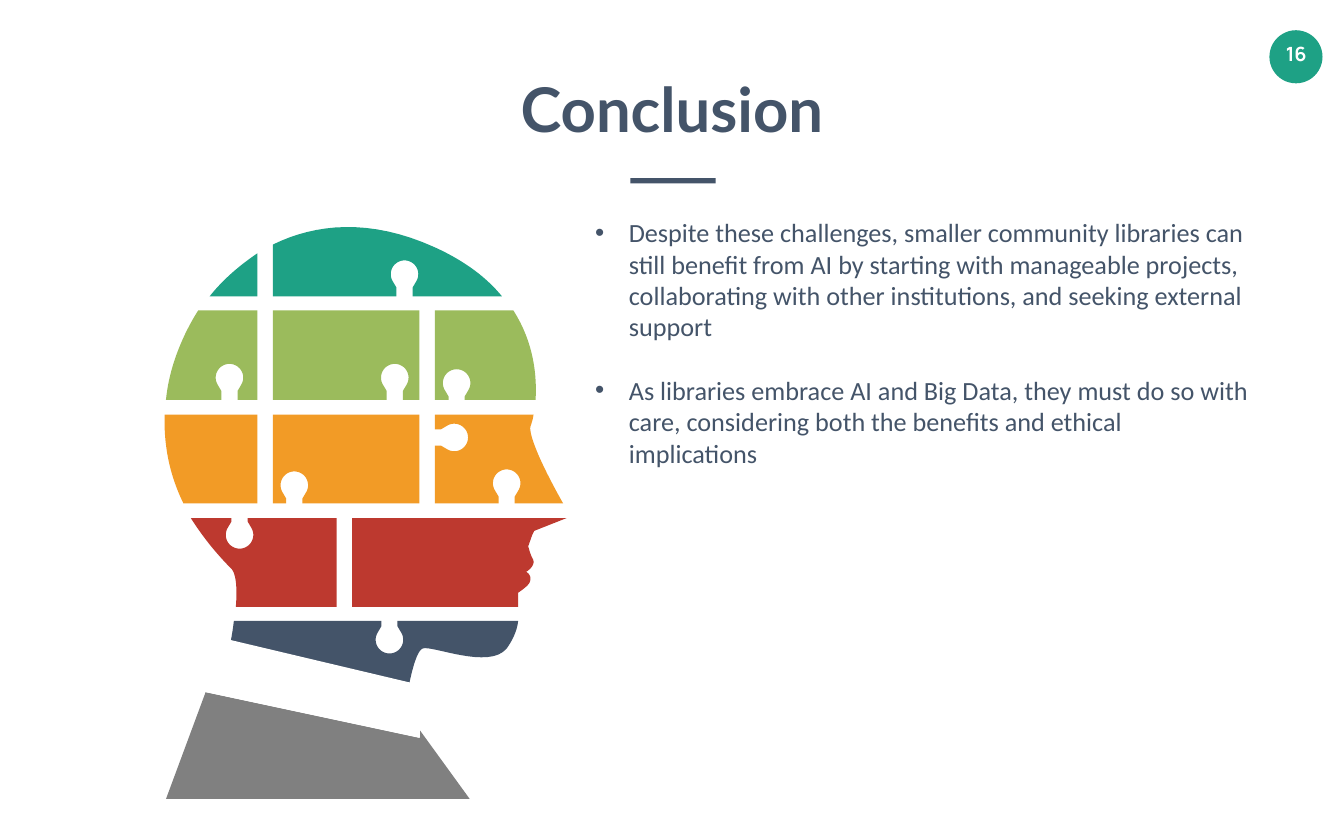
"""Build the conclusion slide: a puzzle head beside two closing points."""
from dataclasses import dataclass
from math import cos, radians, sin
from typing import Union

from lxml.etree import SubElement
from pptx import Presentation
from pptx.dml.color import RGBColor
from pptx.enum.shapes import MSO_SHAPE as Preset
from pptx.enum.text import MSO_AUTO_SIZE as AutoSize, PP_ALIGN as Align
from pptx.oxml.ns import qn
from pptx.util import Cm, Pt

Point = tuple[float, float]

TEAL, GREEN, ORANGE, RED = "1EA185", "9BBB5C", "F29B26", "BD392F"
NAVY, GREY, WHITE = "445469", "808080", "FFFFFF"
RIGHT, LEFT, UP = (1, 0), (-1, 0), (0, -1)
HEAD_RADIUS, NECK_HALF, HEAD_OFFSET = 0.205, 0.12, 0.2
CURVE_STEPS = 16

POINTS = (
    "Despite these challenges, smaller community libraries can still benefit from AI "
    "by starting with manageable projects, collaborating with other institutions, "
    "and seeking external support",
    "As libraries embrace AI and Big Data, they must do so with care, considering "
    "both the benefits and ethical implications",
)


@dataclass(frozen=True)
class Curve:
    """Cubic curve from the current point to end."""
    control1: Point
    control2: Point
    end: Point


@dataclass(frozen=True)
class Socket:
    """Puzzle socket cut into the edge of a piece outlined clockwise."""
    x: float
    y: float
    neck: float
    travel: tuple[int, int]


Step = Union[Point, Curve, Socket]


@dataclass(frozen=True)
class Row:
    """Pieces that share a colour."""
    color: str
    pieces: tuple[tuple[Step, ...], ...]


@dataclass(frozen=True)
class TextStyle:
    """Font settings for a text box."""
    font: str
    size: float
    color: str
    bold: bool = False


ROWS = (
    Row(NAVY, ((
        (3.48, 9.24), Socket(5.795, 9.24, 0.08, RIGHT), (7.71, 9.24),
        Curve((7.7, 9.36), (7.64, 9.51), (7.54, 9.65)),
        Curve((7.28, 9.97), (6.43, 9.6), (6.29, 9.65)),
        Curve((6.16, 9.7), (6.06, 10.34), (6.06, 10.34)),
        (3.39, 9.74), Curve((3.39, 9.74), (3.45, 9.51), (3.48, 9.24)),
    ),)),
    Row(RED, (
        ((2.84, 7.71), Socket(3.565, 7.71, 0.05, RIGHT), (5.01, 7.71), (5.01, 9.03),
         (3.51, 9.03), Curve((3.53, 8.78), (3.52, 8.54), (3.44, 8.46)),
         Curve((3.19, 8.21), (3, 7.96), (2.84, 7.71))),
        ((5.24, 7.71), (8.43, 7.71), (7.95, 7.9), (7.92, 7.96), (7.86, 8.13),
         Curve((7.86, 8.13), (7.9, 8.28), (7.93, 8.32)),
         Curve((7.98, 8.42), (7.83, 8.51), (7.83, 8.51)),
         Curve((7.83, 8.51), (7.93, 8.56), (7.88, 8.67)),
         Curve((7.85, 8.73), (7.71, 8.82), (7.71, 8.82)),
         (7.71, 9.03), (5.24, 9.03)),
    )),
    Row(TEAL, (
        ((4.06, 3.64), Curve((4.69, 3.33), (5.5, 3.24), (6.47, 3.68)),
         Curve((6.93, 3.89), (7.25, 4.14), (7.47, 4.41)),
         Socket(6.02, 4.41, 0.13, LEFT), (4.06, 4.41)),
        ((3.12, 4.41), Curve((3.31, 4.17), (3.55, 3.96), (3.83, 3.77)), (3.83, 4.41)),
    )),
    Row(GREY, (((2.47, 11.89), (3.06, 10.3), (6.25, 10.98), (6.25, 10.87), (6.99, 11.89)),)),
    Row(WHITE, (((3.06, 10.3), (3.33, 9.5), (6.24, 10.19), (6.24, 10.98)),)),
    Row(ORANGE, (
        ((4.06, 6.17), (6.24, 6.17), (6.24, 7.49),
         Socket(4.38, 7.49, 0.07, LEFT), (4.06, 7.49)),
        ((2.45, 6.17), (3.83, 6.17), (3.83, 7.49), (2.73, 7.49),
         Curve((2.5, 7.02), (2.44, 6.58), (2.45, 6.17))),
        ((6.47, 6.17), (7.94, 6.17), Curve((7.92, 6.3), (7.89, 6.33), (7.89, 6.38)),
         Curve((7.91, 6.68), (8.38, 7.49), (8.38, 7.49)),
         Socket(7.54, 7.49, 0.1, LEFT), (6.47, 7.49), Socket(6.47, 6.51, 0.09, UP)),
    )),
    Row(GREEN, (
        ((6.47, 4.62), (7.64, 4.62), Curve((7.95, 5.11), (7.99, 5.6), (7.97, 5.95)),
         Socket(6.795, 5.95, 0.05, LEFT), (6.47, 5.95)),
        ((4.06, 4.62), (6.24, 4.62), (6.24, 5.95),
         Socket(5.875, 5.95, 0.13, LEFT), (4.06, 5.95)),
        ((2.95, 4.62), (3.83, 4.62), (3.83, 5.95),
         Socket(3.415, 5.95, 0.13, LEFT), (2.47, 5.95),
         Curve((2.51, 5.56), (2.63, 5.23), (2.77, 4.94)),
         Curve((2.82, 4.84), (2.88, 4.73), (2.95, 4.62))),
    )),
)


def length(inches: float) -> Cm:
    """Convert layout inches to a centimetre length."""
    return Cm(inches * 2.54)


def rgb(color: str) -> RGBColor:
    """Return the colour for a hex string."""
    return RGBColor.from_string(color)


def curve_points(start: Point, curve: Curve) -> list[Point]:
    """Sample a cubic curve after its start."""
    anchors = (start, curve.control1, curve.control2, curve.end)
    points = []
    for step in range(1, CURVE_STEPS + 1):
        t = step / CURVE_STEPS
        weights = ((1 - t) ** 3, 3 * t * (1 - t) ** 2, 3 * t * t * (1 - t), t ** 3)
        points.append(tuple(sum(w * a[axis] for w, a in zip(weights, anchors)) for axis in (0, 1)))
    return points


def socket_points(socket: Socket) -> list[Point]:
    """Trace the neck and round head of a socket."""
    head = [(-HEAD_RADIUS * cos(radians(angle)),
             socket.neck + HEAD_OFFSET + HEAD_RADIUS * sin(radians(angle)))
            for angle in range(-30, 211, 8)]
    local = [(-NECK_HALF, 0), (-NECK_HALF, socket.neck), *head,
             (NECK_HALF, socket.neck), (NECK_HALF, 0)]
    dx, dy = socket.travel
    return [(socket.x + along * dx - depth * dy, socket.y + along * dy + depth * dx)
            for along, depth in local]


def outline(steps: tuple[Step, ...]) -> list[Point]:
    """Flatten the steps of a piece into points."""
    points: list[Point] = []
    for step in steps:
        if isinstance(step, Curve):
            points += curve_points(points[-1], step)
        elif isinstance(step, Socket):
            points += socket_points(step)
        else:
            points.append(step)
    return points


def paint(shape, color: str) -> None:
    """Give a shape a plain fill without line or shadow."""
    shape.shadow.inherit = False
    shape.fill.solid()
    shape.fill.fore_color.rgb = rgb(color)
    shape.line.fill.background()


def draw_row(slide, row: Row) -> None:
    """Draw the pieces of a row, grouped when there are several."""
    shapes = slide.shapes.add_group_shape().shapes if len(row.pieces) > 1 else slide.shapes
    for piece in row.pieces:
        start, *rest = [(length(x), length(y)) for x, y in outline(piece)]
        builder = shapes.build_freeform(*start)
        builder.add_line_segments(rest, close=True)
        paint(builder.convert_to_shape(), row.color)


def draw_preset(slide, preset, box: tuple[float, ...], color: str) -> None:
    """Draw a filled preset shape."""
    paint(slide.shapes.add_shape(preset, *map(length, box)), color)


def draw_text(slide, box: tuple[float, ...], text: str, style: TextStyle,
              align=Align.LEFT, insets: Point = (0.1, 0.05), wrap: bool = True):
    """Add a styled text box and return its text frame."""
    text_frame = slide.shapes.add_textbox(*map(length, box)).text_frame
    text_frame.word_wrap = wrap
    text_frame.auto_size = AutoSize.SHAPE_TO_FIT_TEXT
    text_frame.margin_left = text_frame.margin_right = length(insets[0])
    text_frame.margin_top = text_frame.margin_bottom = length(insets[1])
    text_frame.text = text
    for paragraph in text_frame.paragraphs:
        paragraph.alignment = align
        for run in paragraph.runs:
            run.font.name, run.font.size = style.font, Pt(style.size)
            run.font.bold, run.font.color.rgb = style.bold, rgb(style.color)
    return text_frame


def add_bullet(paragraph) -> None:
    """Give a paragraph a hanging bullet."""
    properties = paragraph._p.get_or_add_pPr()
    properties.set("marL", str(length(0.5)))
    properties.set("indent", str(-length(0.5)))
    SubElement(properties, qn("a:buFont"), typeface="Arial")
    SubElement(properties, qn("a:buChar"), char="•")


def main() -> None:
    """Build and save the slide."""
    presentation = Presentation()
    presentation.slide_width, presentation.slide_height = length(20), length(12.5)
    slide = presentation.slides.add_slide(presentation.slide_layouts[6])
    draw_preset(slide, Preset.OVAL, (18.89, 0.45, 0.79, 0.79), TEAL)
    draw_text(slide, (18.96, 0.55, 0.66, 0.51), "16", TextStyle("Manrope", 21, WHITE, True),
              Align.CENTER, (0.15, 0.07), wrap=False)
    for row in ROWS:
        draw_row(slide, row)
    draw_text(slide, (4.93, 1.02, 10.14, 1.19), "Conclusion", TextStyle("Lato", 66, NAVY, True),
              Align.CENTER, (0.08, 0.04))
    draw_preset(slide, Preset.RECTANGLE, (9.38, 2.65, 1.27, 0.08), NAVY)
    body = draw_text(slide, (8.76, 3.17, 10, 3.88), "\n".join(POINTS),
                     TextStyle("Calibri", 28.1, NAVY))
    for paragraph in body.paragraphs:
        add_bullet(paragraph)
    body.paragraphs[-1].space_before = Pt(34)
    presentation.save("out.pptx")


if __name__ == "__main__":
    main()
